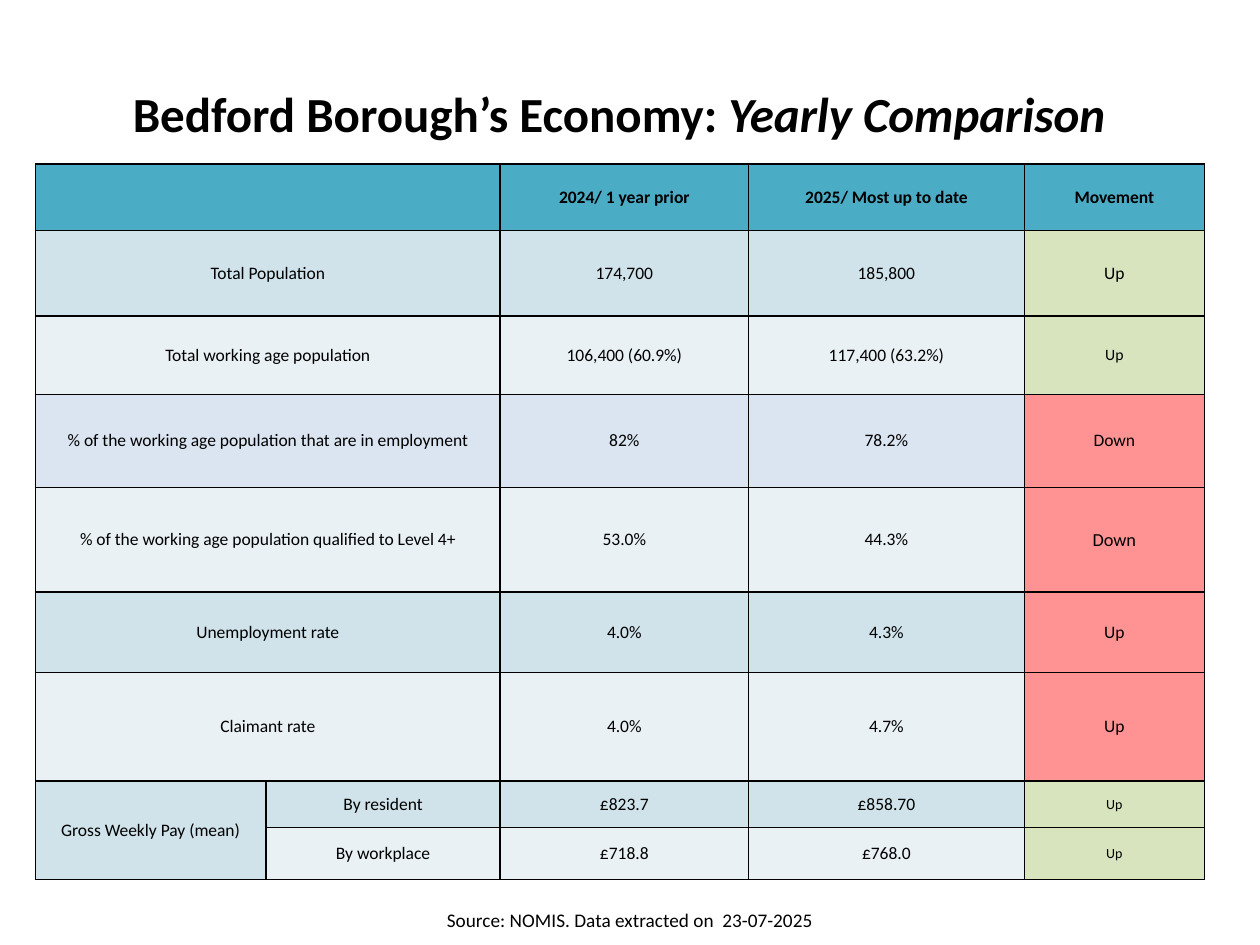
from lxml import etree
from pptx import Presentation
from pptx import util as u
from pptx.dml.color import RGBColor
from pptx.enum import text
from pptx.oxml import ns

COLORS = {
    "ink": "000000", "header": "4BACC6", "band": "D0E3EA", "pale": "E9F1F5",
    "lilac": "DBE5F1", "good": "D7E4BD", "bad": "FF9393",
}
FONT = "Calibri"
TITLE = [("Bedford Borough’s Economy: ", False), ("Yearly Comparison", True)]
SOURCE = "Source: NOMIS. Data extracted on  23-07-2025"

COLUMN_WIDTHS = [1.83, 1.86, 1.97, 2.19, 1.43]
HEADINGS = ["", "", "2024/ 1 year prior", "2025/ Most up to date", "Movement"]
# height, row colour, labels and values, movement, movement colour, movement size
INDICATORS = [
    (0.68, "band", ["Total Population", "", "174,700", "185,800"], "Up", "good", 10),
    (0.62, "pale", ["Total working age population", "", "106,400 (60.9%)", "117,400 (63.2%)"],
     "Up", "good", 9),
    (0.74, "lilac", ["% of the working age population that are in employment", "", "82%", "78.2%"],
     "Down", "bad", 10),
    (0.83, "pale", ["% of the working age population qualified to Level 4+", "", "53.0%", "44.3%"],
     "Down", "bad", 10.5),
    (0.64, "band", ["Unemployment rate", "", "4.0%", "4.3%"], "Up", "bad", 10),
    (0.86, "pale", ["Claimant rate", "", "4.0%", "4.7%"], "Up", "bad", 10),
    (0.37, "band", ["Gross Weekly Pay (mean)", "By resident", "£823.7", "£858.70"],
     "Up", "good", 8),
    (0.41, "pale", ["", "By workplace", "£718.8", "£768.0"], "Up", "good", 8),
]
HEADER_HEIGHT = 0.53
PAY_ROW = 7


def color(name):
    return RGBColor.from_string(COLORS[name])


def style(paragraph, size, bold=False):
    paragraph.alignment = text.PP_ALIGN.CENTER
    font = paragraph.font
    font.name, font.size, font.bold = FONT, u.Pt(size), bold
    font.color.rgb = color("ink")


def add_text(page, place, spans, size, bold=False):
    box = page.shapes.add_textbox(*map(u.Inches, place))
    frame = box.text_frame
    frame.word_wrap = True
    paragraph = frame.paragraphs[0]
    for words, italic in spans:
        span = paragraph.add_run()
        span.text = words
        if italic:
            span.font.italic = True
    style(paragraph, size, bold)
    return frame


def add_borders(cell):
    properties = cell._tc.get_or_add_tcPr()
    for side in ("a:lnL", "a:lnR", "a:lnT", "a:lnB"):
        line = etree.SubElement(properties, ns.qn(side), w=str(u.Pt(1)))
        fill = etree.SubElement(line, ns.qn("a:solidFill"))
        etree.SubElement(fill, ns.qn("a:srgbClr"), val=COLORS["ink"])


def fill_cell(cell, words, fill, size, bold):
    add_borders(cell)
    cell.fill.solid()
    cell.fill.fore_color.rgb = color(fill)
    cell.vertical_anchor = text.MSO_ANCHOR.MIDDLE
    cell.text = words
    style(cell.text_frame.paragraphs[0], size, bold)


def add_comparison(page):
    heights = [HEADER_HEIGHT] + [indicator[0] for indicator in INDICATORS]
    place = (0.28, 1.3, sum(COLUMN_WIDTHS), sum(heights))
    table = page.shapes.add_table(
        len(heights), len(COLUMN_WIDTHS), *map(u.Inches, place)).table
    table.first_row = table.horz_banding = False
    for column, width in zip(table.columns, COLUMN_WIDTHS):
        column.width = u.Inches(width)
    for row, height in zip(table.rows, heights):
        row.height = u.Inches(height)

    for column, heading in enumerate(HEADINGS):
        fill_cell(table.cell(0, column), heading, "header", 10, True)
    for row, (_, fill, values, movement, signal, size) in enumerate(INDICATORS, 1):
        for column, value in enumerate(values):
            fill_cell(table.cell(row, column), value, fill, 10, False)
        fill_cell(table.cell(row, len(values)), movement, signal, size, False)

    for row in range(PAY_ROW):
        table.cell(row, 0).merge(table.cell(row, 1))
    table.cell(PAY_ROW, 0).merge(table.cell(PAY_ROW + 1, 0))


def main():
    deck = Presentation()
    deck.slide_width, deck.slide_height = u.Inches(10), u.Inches(7.5)
    page = deck.slides.add_slide(deck.slide_layouts[6])
    title = add_text(page, (0.28, 0.52, 9.43, 0.75), TITLE, 28, True)
    title.vertical_anchor = text.MSO_ANCHOR.MIDDLE
    title.margin_right = u.Inches(0.26)
    add_comparison(page)
    source = add_text(page, (0, 7.16, 10, 0.29), [(SOURCE, False)], 11)
    source.auto_size = text.MSO_AUTO_SIZE.SHAPE_TO_FIT_TEXT
    deck.save("out.pptx")


if __name__ == "__main__":
    main()
